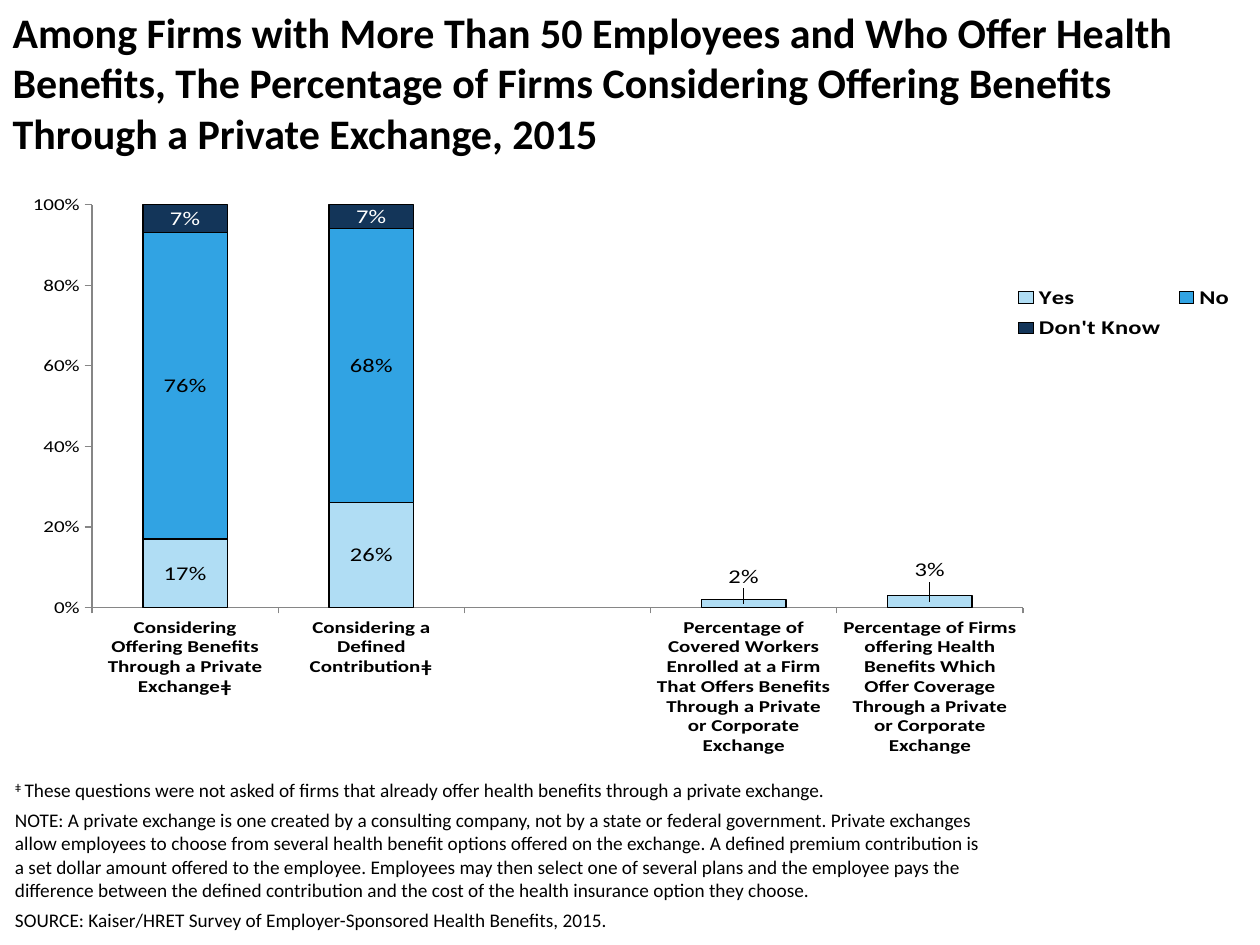
import pptx
import pptx.chart.data
import pptx.enum.chart
import pptx.enum.text
import pptx.util
from lxml import etree
from pptx.dml.color import RGBColor
from pptx.util import Inches

COLORS = {
    "text": "000000",
    "light_text": "FFFFFF",
    "axis": "868686",
    "yes": "B0DDF4",
    "no": "31A3E3",
    "dont_know": "133559",
}


def color(name):
    return RGBColor.from_string(COLORS[name])


def add_text(paragraph, text, size=11, font="Calibri", bold=False, superscript=False):
    run = paragraph.add_run()
    run.text = text
    run.font.size = pptx.util.Pt(size)
    run.font.name = font
    run.font.bold = bold
    run.font.color.rgb = color("text")
    if superscript:
        run.font._element.set("baseline", "30000")


deck = pptx.Presentation()
deck.slide_width, deck.slide_height = Inches(10), Inches(7.5)
slide = deck.slides.add_slide(deck.slide_layouts[5])

# Title
title = slide.shapes.title
title.left, title.top, title.width, title.height = Inches(0), Inches(0), Inches(10), Inches(1.25)
title.text_frame.auto_size = pptx.enum.text.MSO_AUTO_SIZE.NONE
title.text_frame.vertical_anchor = pptx.enum.text.MSO_ANCHOR.TOP
heading = title.text_frame.paragraphs[0]
heading.alignment = pptx.enum.text.PP_ALIGN.LEFT
add_text(heading, "Among Firms with More Than 50 Employees and Who Offer Health Benefits, "
         "The Percentage of Firms Considering Offering Benefits Through a Private Exchange, 2015",
         size=24, bold=True)

# Footnotes
footnotes = slide.shapes.add_textbox(Inches(0.02), Inches(6.13), Inches(7.89), Inches(1.36)).text_frame
footnotes.word_wrap = True
notes = [
    "These questions were not asked of firms that already offer health benefits through a private exchange.",
    "NOTE: A private exchange is one created by a consulting company, not by a state or federal "
    "government. Private exchanges allow employees to choose from several health benefit options "
    "offered on the exchange. A defined premium contribution is a set dollar amount offered to the "
    "employee. Employees may then select one of several plans and the employee pays the difference "
    "between the defined contribution and the cost of the health insurance option they choose.",
    "SOURCE: Kaiser/HRET Survey of Employer-Sponsored Health Benefits, 2015.",
]
for index, note in enumerate(notes):
    if index == 0:
        paragraph = footnotes.paragraphs[0]
        add_text(paragraph, "ǂ ", font="Arial", superscript=True)
    else:
        paragraph = footnotes.add_paragraph()
        paragraph.space_before = pptx.util.Pt(4)
    add_text(paragraph, note)

# Chart data
answers = [
    ("Yes", (0.17, 0.26, None, 0.02, 0.03), "yes", "text"),
    ("No", (0.76, 0.68, None, None, None), "no", "text"),
    ("Don't Know", (0.07, 0.07, None, None, None), "dont_know", "light_text"),
]
survey = pptx.chart.data.CategoryChartData(number_format="0%")
survey.categories = [
    "Considering Offering Benefits Through a Private Exchangeǂ",
    "Considering a Defined Contributionǂ",
    "",
    "Percentage of Covered Workers Enrolled at a Firm That Offers Benefits "
    "Through a Private or Corporate Exchange",
    "Percentage of Firms offering Health Benefits Which Offer Coverage "
    "Through a Private or Corporate Exchange",
]
for name, shares, _, _ in answers:
    survey.add_series(name, shares)

# Stacked columns
chart = slide.shapes.add_chart(
    pptx.enum.chart.XL_CHART_TYPE.COLUMN_STACKED,
    Inches(0.17), Inches(1.5), Inches(9.67), Inches(4.5), survey).chart
chart.has_title = False
chart.font.name = "Calibri"
chart.font.size = pptx.util.Pt(18)
chart.font.color.rgb = color("text")
columns = chart.plots[0]
columns.gap_width, columns.overlap = 120, 100
columns.vary_by_categories = False

for answer, (_, _, fill, label_color) in zip(columns.series, answers):
    answer.format.fill.solid()
    answer.format.fill.fore_color.rgb = color(fill)
    answer.format.line.color.rgb = color("text")
    answer.format.line.width = pptx.util.Pt(0.75)
    labels = answer.data_labels
    labels.show_value = True
    labels.number_format, labels.number_format_is_linked = "0%", False
    labels.font.size = pptx.util.Pt(14)
    labels.font.color.rgb = color(label_color)

# Axes
for axis in (chart.category_axis, chart.value_axis):
    axis.has_major_gridlines = False
    axis.major_tick_mark = pptx.enum.chart.XL_TICK_MARK.OUTSIDE
    axis.tick_labels.font.size = pptx.util.Pt(12)
    axis.format.line.color.rgb = color("axis")
chart.category_axis.tick_labels.font.bold = True
shares_axis = chart.value_axis
shares_axis.minimum_scale, shares_axis.maximum_scale, shares_axis.major_unit = 0, 1, 0.2
shares_axis.tick_labels.number_format = "0%"
shares_axis.tick_labels.number_format_is_linked = False

# Legend
chart.has_legend = True
chart.legend.position = pptx.enum.chart.XL_LEGEND_POSITION.BOTTOM
chart.legend.include_in_layout = False
chart.legend.font.size = pptx.util.Pt(14)
chart.legend.font.bold = True

# Manual places for the plot, the legend and the labels above the short columns
for point in (3, 4):
    columns.series[0].points[point].data_label.font.size = pptx.util.Pt(14)
edges = [("xMode", "edge"), ("yMode", "edge")]
places = [
    ("c:chart/c:plotArea", 0,
     [("layoutTarget", "inner"), *edges, ("x", 0.058), ("y", 0.035), ("w", 0.764), ("h", 0.896)]),
    ("c:chart/c:legend", 1, [*edges, ("x", 0.81), ("y", 0.2), ("w", 0.19), ("h", 0.15)]),
    (".//c:dLbl[c:idx/@val='3']", 1, [("x", 0), ("y", -0.06)]),
    (".//c:dLbl[c:idx/@val='4']", 1, [("x", 0), ("y", -0.07)]),
]
for target, position, settings in places:
    parent = chart.element.xpath(target)[0]
    namespace = "{%s}" % parent.nsmap["c"]
    for old_layout in parent.findall(namespace + "layout"):
        parent.remove(old_layout)
    layout = etree.Element(namespace + "layout")
    manual = etree.SubElement(layout, namespace + "manualLayout")
    for key, value in settings:
        etree.SubElement(manual, namespace + key).set("val", str(value))
    parent.insert(position, layout)

deck.save("out.pptx")
